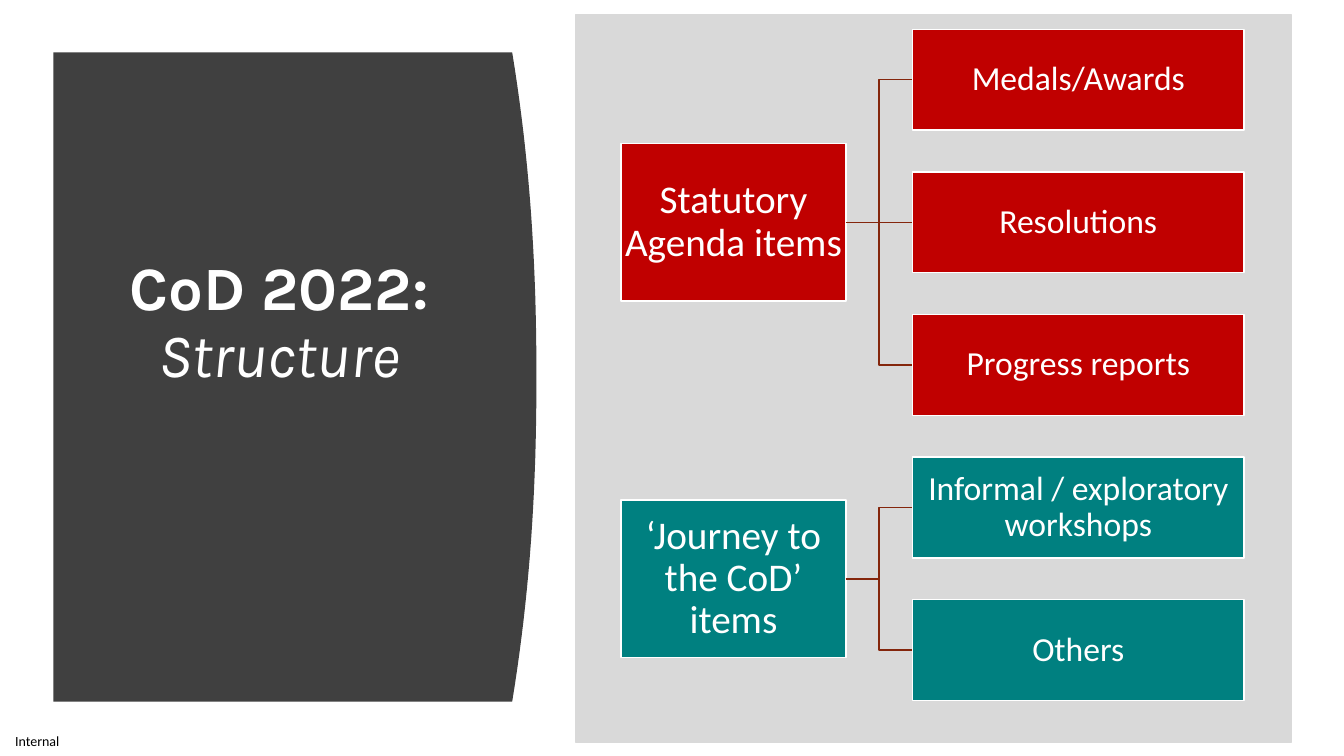
"""Build the CoD 2022 structure slide with its two-level agenda tree."""
from lxml import etree
from pptx import Presentation
from pptx import util as u
from pptx.dml.color import RGBColor
from pptx.enum import shapes, text
from pptx.oxml.ns import qn

TITLE = [("CoD 2022:", {"bold": True}), ("Structure", {"bold": False, "italic": True})]
FOOTER = "Internal"
TREE = [
    ("Statutory Agenda items", "C00000", ["Medals/Awards", "Resolutions", "Progress reports"]),
    ("‘Journey to the CoD’ items", "008080", ["Informal / exploratory workshops", "Others"]),
]
WHITE, DARK, GREY, LINK = "FFFFFF", "404040", "D9D9D9", "84260C"
PARENT_X, PARENT_W, PARENT_H = 6.16, 2.23, 1.56
CHILD_X, CHILD_W, CHILD_H = 9.05, 3.29, 1.0
CHILD_TOP, CHILD_STEP = 0.29, 1.415
PANEL_X, PANEL_EDGE, PANEL_TOP, PANEL_BOTTOM, BULGE, STEPS = 0.53, 5.08, 0.52, 6.96, 0.24, 40


def rgb(value):
    return RGBColor.from_string(value)


def paint(sp, fill, line=None):
    sp.shadow.inherit = False
    sp.fill.solid()
    sp.fill.fore_color.rgb = rgb(fill)
    if line:
        sp.line.color.rgb = rgb(line)
        sp.line.width = u.Pt(1)
    else:
        sp.line.fill.background()


def frame(sp, inset):
    tf = sp.text_frame
    fmt = {"word_wrap": True, "vertical_anchor": text.MSO_ANCHOR.MIDDLE}
    fmt.update({"margin_" + side: u.Inches(inset) for side in ("left", "top", "right", "bottom")})
    for name, value in fmt.items():
        setattr(tf, name, value)
    return tf


def add_run(p, words, font, size, color, **fmt):
    r = p.add_run()
    r.text = words
    for name, value in {"name": font, "size": u.Pt(size), **fmt}.items():
        setattr(r.font, name, value)
    r.font.color.rgb = rgb(color)


def rect(s, x, y, w, h, fill, line):
    sp = s.shapes.add_shape(shapes.MSO_SHAPE.RECTANGLE, *map(u.Inches, (x, y, w, h)))
    paint(sp, fill, line)
    return sp


def node(s, x, y, w, h, fill, words, size):
    sp = rect(s, x, y, w, h, fill, WHITE)
    p = frame(sp, 0.02).paragraphs[0]
    p.alignment, p.line_spacing = text.PP_ALIGN.CENTER, 0.9
    add_run(p, words, "Calibri", size, WHITE)
    return sp


def link(s, parent, child, straight):
    kind = shapes.MSO_CONNECTOR.STRAIGHT if straight else shapes.MSO_CONNECTOR.ELBOW
    cx = s.shapes.add_connector(kind, 0, 0, 0, 0)
    cx.begin_connect(parent, 3)
    cx.end_connect(child, 1)
    cx.line.color.rgb = rgb(LINK)
    cx.line.width = u.Pt(1)
    etree.SubElement(cx._element.spPr, qn("a:effectLst"))


def title_panel(s):
    mid, half = (PANEL_TOP + PANEL_BOTTOM) / 2, (PANEL_BOTTOM - PANEL_TOP) / 2
    points = []
    for i in range(STEPS + 1):
        t = 2 * i / STEPS - 1
        points.append((PANEL_EDGE + BULGE * (1 - abs(t) ** 2.2), mid + half * t))
    points.append((PANEL_X, PANEL_BOTTOM))
    fb = s.shapes.build_freeform(u.Inches(PANEL_X), u.Inches(PANEL_TOP))
    fb.add_line_segments([(u.Inches(x), u.Inches(y)) for x, y in points])
    paint(fb.convert_to_shape(), DARK)

    tf = frame(s.shapes.add_textbox(*map(u.Inches, (0.66, 0.93, 4.22, 5.24))), 0.05)
    tf.margin_bottom = u.Inches(0.72)
    p = tf.paragraphs[0]
    fmt = {"alignment": text.PP_ALIGN.CENTER, "line_spacing": 0.9,
           "space_before": u.Pt(12), "space_after": u.Pt(6)}
    for name, value in fmt.items():
        setattr(p, name, value)
    for i, (words, style) in enumerate(TITLE):
        if i:
            p.add_line_break()
        add_run(p, words, "Karla", 44, WHITE, **style)


def agenda_tree(s):
    rect(s, 5.71, 0.15, 7.1, 7.21, GREY, GREY)
    row = 0
    for name, color, children in TREE:
        middle = row + (len(children) - 1) / 2
        y = CHILD_TOP + middle * CHILD_STEP + (CHILD_H - PARENT_H) / 2
        parent = node(s, PARENT_X, y, PARENT_W, PARENT_H, color, name, 28)
        for words in children:
            y = CHILD_TOP + row * CHILD_STEP
            child = node(s, CHILD_X, y, CHILD_W, CHILD_H, color, words, 24)
            link(s, parent, child, row == middle)
            row += 1


def main():
    prs = Presentation()
    prs.slide_width, prs.slide_height = u.Inches(13.33), u.Inches(7.5)
    s = prs.slides.add_slide(prs.slide_layouts[6])
    tf = frame(s.shapes.add_textbox(*map(u.Inches, (0.15, 7.21, 0.59, 0.29))), 0)
    add_run(tf.paragraphs[0], FOOTER, "Calibri", 10, "000000")
    title_panel(s)
    agenda_tree(s)
    prs.save("out.pptx")


if __name__ == "__main__":
    main()
